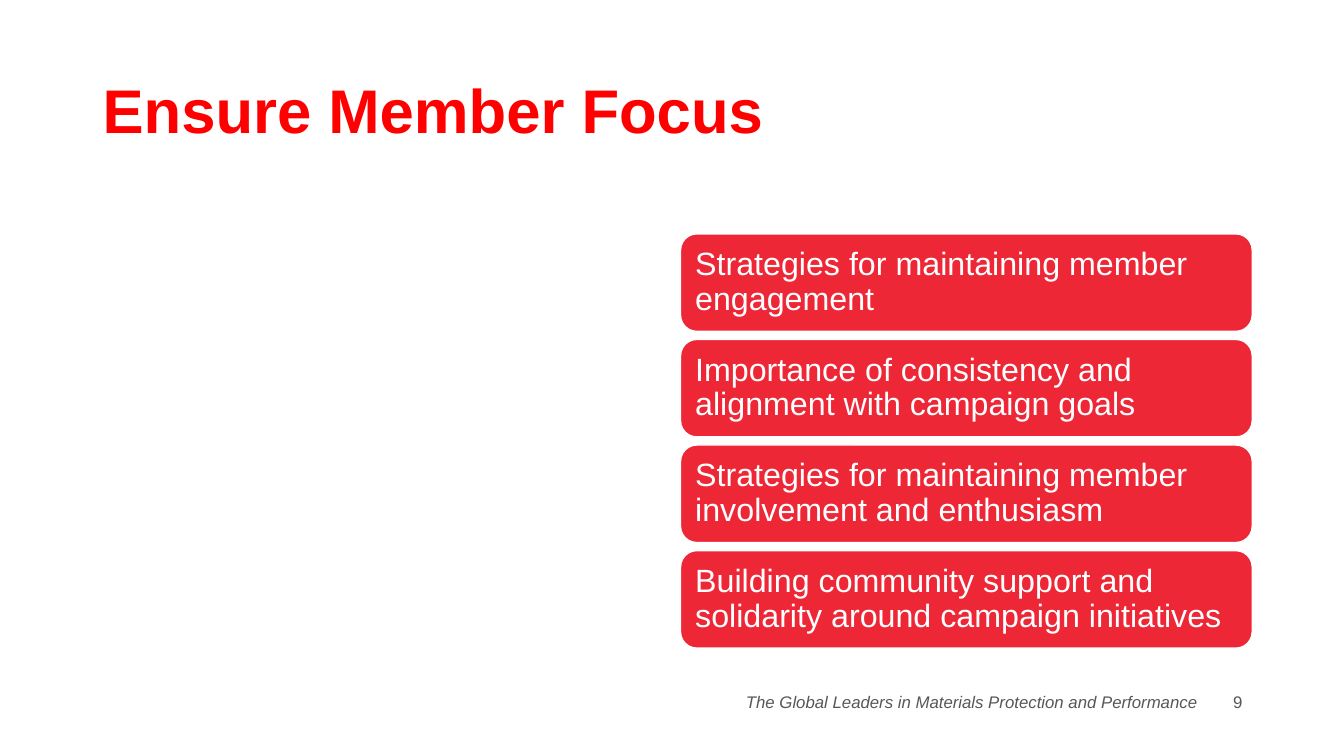
from pptx import Presentation
from pptx import util as u
from pptx.dml.color import RGBColor
from pptx.enum import shapes, text

RED, CARD_RED, GREY, WHITE = "FF0000", "EE2737", "545859", "FFFFFF"
STRATEGIES = [
    "Strategies for maintaining member engagement",
    "Importance of consistency and alignment with campaign goals",
    "Strategies for maintaining member involvement and enthusiasm",
    "Building community support and solidarity around campaign initiatives",
]


def colour(value):
    return RGBColor.from_string(value)


def write(shape, words, size, ink, bold=False, italic=False,
          align=text.PP_ALIGN.LEFT, spacing=1.0, inset=None):
    frame = shape.text_frame
    frame.word_wrap = True
    frame.vertical_anchor = text.MSO_ANCHOR.MIDDLE
    if inset is not None:
        frame.margin_left = frame.margin_right = u.Inches(inset)
        frame.margin_top = frame.margin_bottom = u.Inches(inset)
    para = frame.paragraphs[0]
    para.alignment = align
    para.line_spacing = spacing
    span = para.add_run()
    span.text = words
    span.font.name = "Arial"
    span.font.size = u.Pt(size)
    span.font.bold = bold
    span.font.italic = italic
    span.font.color.rgb = colour(ink)


def add_label(page, box, words, size, ink, **style):
    label = page.shapes.add_textbox(*(u.Inches(side) for side in box))
    write(label, words, size, ink, **style)


def add_cards(page, box, items, gap=0.08):
    left, top, width, height = box
    card_height = (height - gap * (len(items) - 1)) / len(items)
    for row, words in enumerate(items):
        card_top = top + row * (card_height + gap)
        card = page.shapes.add_shape(
            shapes.MSO_SHAPE.ROUNDED_RECTANGLE, u.Inches(left),
            u.Inches(card_top), u.Inches(width), u.Inches(card_height))
        card.shadow.inherit = False
        card.fill.solid()
        card.fill.fore_color.rgb = colour(CARD_RED)
        card.line.color.rgb = colour(WHITE)
        card.line.width = u.Pt(1)
        write(card, words, 23, WHITE, spacing=0.9, inset=0.1)


def add_footer(page, box):
    left, top, width, height = box
    number_width, tagline_width = 0.69, 4.94
    right = text.PP_ALIGN.RIGHT
    add_label(page, (left, top, tagline_width, height),
              "The Global Leaders in Materials Protection and Performance",
              12, GREY, italic=True, align=right)
    add_label(page, (left + width - number_width, top, number_width, height),
              "9", 12, GREY, align=right)


def main():
    deck = Presentation()
    deck.slide_width, deck.slide_height = u.Inches(13.33), u.Inches(7.5)
    page = deck.slides.add_slide(deck.slide_layouts[6])

    # Title
    add_label(page, (0.92, 0.4, 11.5, 1.45), "Ensure Member Focus", 44, RED,
              bold=True, spacing=0.9)
    # Strategy cards
    add_cards(page, (6.75, 2.32, 5.67, 4.11), STRATEGIES)
    # Tagline and page number
    add_footer(page, (7.04, 6.76, 5.38, 0.4))

    deck.save("out.pptx")


if __name__ == "__main__":
    main()
